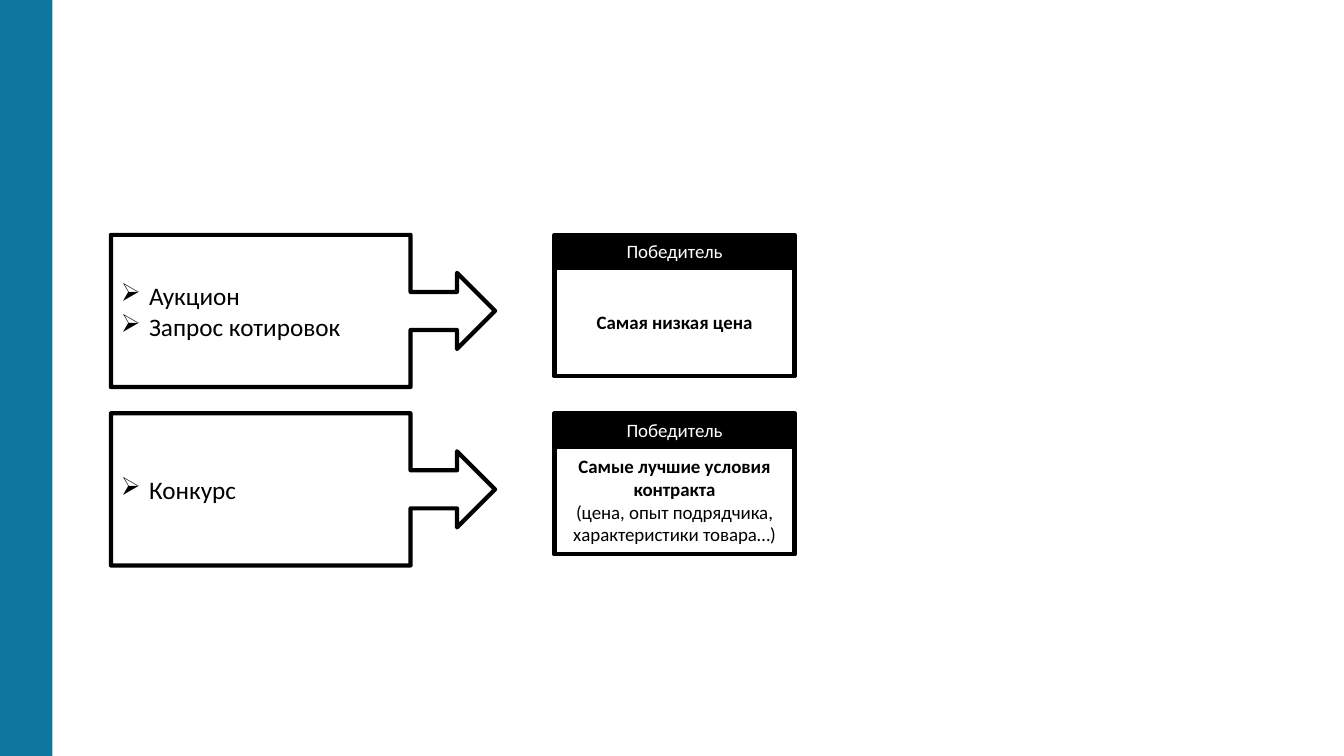
from lxml import etree
from pptx import Presentation
from pptx import util as u
from pptx.dml.color import RGBColor
from pptx.enum import shapes, text
from pptx.oxml.ns import qn

TEAL = RGBColor(0x0E, 0x77, 0x9D)
BLACK = RGBColor(0, 0, 0)
WHITE = RGBColor(255, 255, 255)
FONT = "Calibri"
LEFT, ALIGN_CENTER = text.PP_ALIGN.LEFT, text.PP_ALIGN.CENTER
TOP, MIDDLE = text.MSO_ANCHOR.TOP, text.MSO_ANCHOR.MIDDLE

# Procedures and, for each winner, (text, bold) paragraphs
ROWS = [
    (["Аукцион", "Запрос котировок"], [("Самая низкая цена", True)]),
    (["Конкурс"], [("Самые лучшие условия контракта", True),
                   ("(цена, опыт подрядчика, характеристики товара…)", False)]),
]
FIRST_TOP, ROW_STEP = 2.33, 1.77


def add_block(page, kind, left, top, width, height, fill, line=None):
    block = page.shapes.add_shape(kind, u.Inches(left), u.Inches(top),
                                  u.Inches(width), u.Inches(height))
    block.shadow.inherit = False
    block.fill.solid()
    block.fill.fore_color.rgb = fill
    if line is None:
        block.line.fill.background()
    else:
        block.line.color.rgb = line
        block.line.width = u.Pt(3)
    return block


def write(block, lines, size, color, align, anchor):
    frame = block.text_frame
    frame.word_wrap = True
    frame.vertical_anchor = anchor
    for index, (words, bold) in enumerate(lines):
        para = frame.paragraphs[0] if index == 0 else frame.add_paragraph()
        para.text = words
        para.alignment = align
        para.font.name = FONT
        para.font.size = u.Pt(size)
        para.font.bold = bold
        para.font.color.rgb = color


def add_bullet(para):
    properties = para._p.get_or_add_pPr()
    properties.set("marL", str(u.Inches(0.28)))
    properties.set("indent", str(u.Inches(-0.28)))
    bullet = etree.Element(qn("a:buChar"), char="➢")
    # The bullet goes ahead of the default run properties
    properties.insert(0, bullet)


def add_procedures(page, left, top, width, height, names):
    callout = add_block(page, shapes.MSO_SHAPE.RIGHT_ARROW_CALLOUT,
                        left, top, width, height, WHITE, BLACK)
    for index, value in enumerate((0.25, 0.25, 0.25, 0.78)):
        callout.adjustments[index] = value
    write(callout, [(name, False) for name in names], 18, BLACK, LEFT, MIDDLE)
    for para in callout.text_frame.paragraphs:
        add_bullet(para)


def add_winner(page, left, top, width, height, lines):
    header = 0.33
    card = add_block(page, shapes.MSO_SHAPE.RECTANGLE,
                     left, top, width, height, BLACK, BLACK)
    write(card, [("Победитель", False)], 13.5, WHITE, ALIGN_CENTER, TOP)
    body = add_block(page, shapes.MSO_SHAPE.RECTANGLE,
                     left, top + header, width, height - header, WHITE, BLACK)
    write(body, lines, 13.5, BLACK, ALIGN_CENTER, MIDDLE)


def main():
    deck = Presentation()
    deck.slide_width, deck.slide_height = u.Inches(13.33), u.Inches(7.5)
    page = deck.slides.add_slide(deck.slide_layouts[6])

    # Side band
    add_block(page, shapes.MSO_SHAPE.RECTANGLE, 0, 0, 0.52, 7.5, TEAL)

    # Procedures pointing to their winners
    for row, (names, winner) in enumerate(ROWS):
        top = FIRST_TOP + row * ROW_STEP
        add_procedures(page, 1.1, top, 3.81, 1.51, names)
        add_winner(page, 5.5, top, 2.38, 1.4, winner)

    deck.save("out.pptx")


if __name__ == "__main__":
    main()
